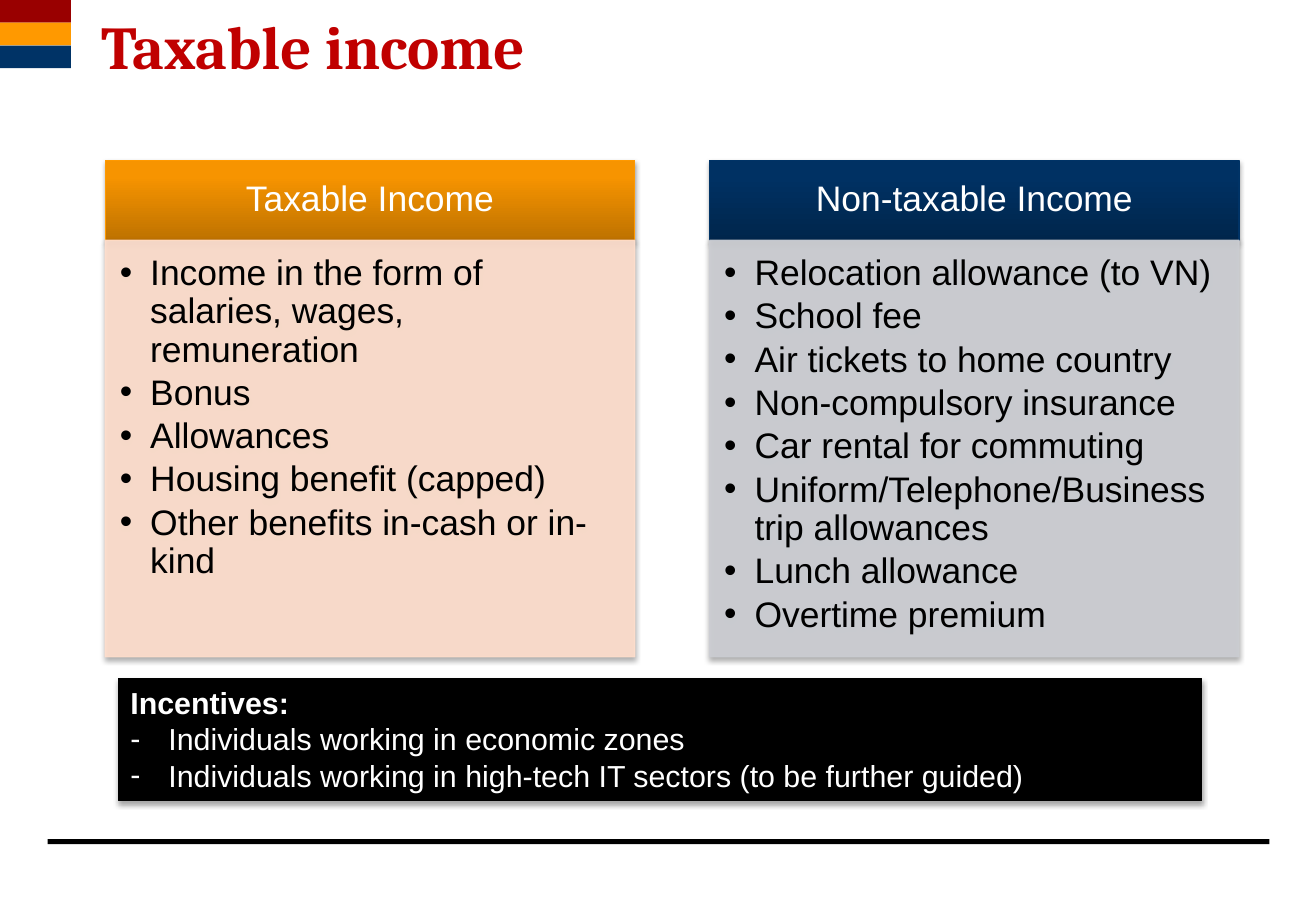
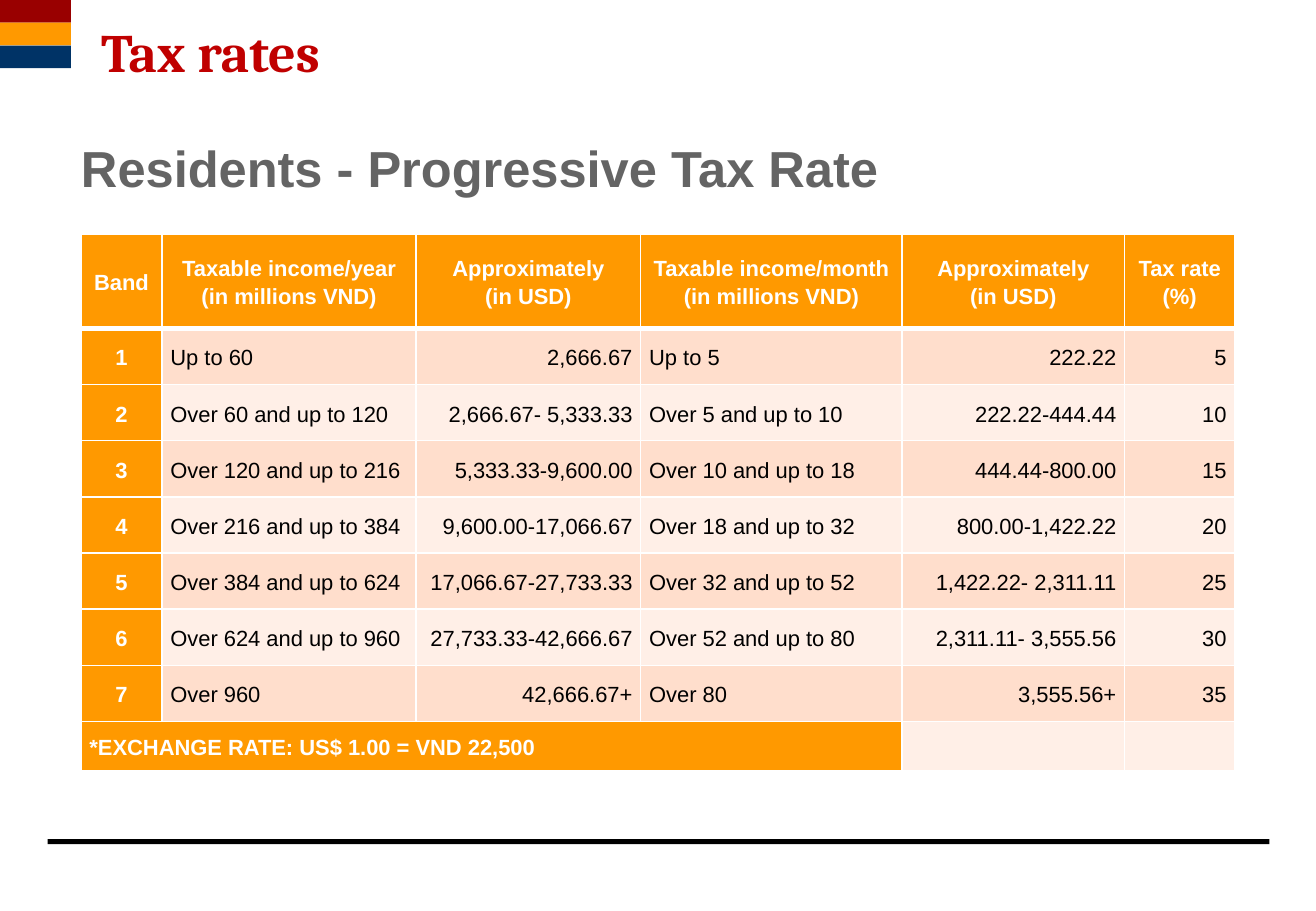
from lxml import etree
from pptx import Presentation
from pptx.dml.color import RGBColor
from pptx.enum.shapes import MSO_SHAPE
from pptx.enum.text import MSO_ANCHOR, MSO_AUTO_SIZE, PP_ALIGN
from pptx.oxml.ns import qn
from pptx.util import Inches, Pt

RECTANGLE = MSO_SHAPE.RECTANGLE
TOP, MIDDLE = MSO_ANCHOR.TOP, MSO_ANCHOR.MIDDLE
LEFT, CENTER, RIGHT = PP_ALIGN.LEFT, PP_ALIGN.CENTER, PP_ALIGN.RIGHT
NO_FIT = MSO_AUTO_SIZE.NONE

COLUMNS, ROWS = 130, 90
CELL = Inches(1 / 12)
COMPARISON, TITLE_AND_CONTENT = 4, 1

BLACK, WHITE, GREY = "000000", "FFFFFF", "646464"
RED, MAROON, ORANGE, NAVY = "C00000", "990000", "FF9900", "003366"
PEACH, PALE_PEACH, SILVER = "FFDECC", "FFEFE7", "CCCED3"


def cells(count):
    """Convert grid cells to a length."""
    return round(count * CELL)


def rgb(value):
    """Turn a hex string into a colour."""
    return RGBColor.from_string(value)


def paint(fill, color, alpha=100):
    """Give a fill one colour and an opacity in percent."""
    fill.solid()
    fill.fore_color.rgb = rgb(color)
    if alpha < 100:
        clr = fill._xPr.find(qn("a:solidFill"))[0]
        etree.SubElement(clr, qn("a:alpha"), val=str(alpha * 1000))


def write(frame, lines, size=21, color=BLACK, font="Arial", bold=False, align=LEFT,
          spacing=1.0, after=0, bullet=None, indent=0, hanging=0):
    """Add one formatted paragraph for each line of text."""
    for line in [lines] if isinstance(lines, str) else lines:
        paragraph = frame.add_paragraph() if frame.text else frame.paragraphs[0]
        properties = paragraph._p.get_or_add_pPr()
        properties.set("marL", str(cells(indent)))
        properties.set("indent", str(-cells(hanging)))
        if bullet:
            etree.SubElement(properties, qn("a:buFont"), typeface="Arial")
            etree.SubElement(properties, qn("a:buChar"), char=bullet)
        else:
            etree.SubElement(properties, qn("a:buNone"))
        paragraph.alignment = align
        paragraph.line_spacing = spacing
        paragraph.space_before = Pt(0)
        paragraph.space_after = Pt(after)
        run = paragraph.add_run()
        run.text = line
        run.font.name, run.font.size, run.font.bold = font, Pt(size), bold
        run.font.color.rgb = rgb(color)


class Deck:
    """Hold the shared style and the current slide."""

    def __init__(self):
        """Set the slide size."""
        self.show = Presentation()
        self.show.slide_width = cells(COLUMNS)
        self.show.slide_height = cells(ROWS)
        self.slide = None

    def start(self, layout):
        """Add a slide and make it current."""
        self.slide = self.show.slides.add_slide(self.show.slide_layouts[layout])

    def place(self, shape, area):
        """Put a shape at left, top, width and height in cells."""
        shape.left, shape.top, shape.width, shape.height = map(cells, area)

    def frame(self, shape, anchor, insets):
        """Prepare the text frame of a shape."""
        frame = shape.text_frame
        frame.word_wrap, frame.auto_size = True, NO_FIT
        frame.vertical_anchor = anchor
        (frame.margin_left, frame.margin_top,
         frame.margin_right, frame.margin_bottom) = map(cells, insets)
        return frame

    def block(self, area, color):
        """Draw a plain rectangle."""
        shape = self.slide.shapes.add_shape(RECTANGLE, *map(cells, area))
        paint(shape.fill, color)
        shape.line.fill.background()
        shape.shadow.inherit = False
        return shape

    def brand_master(self):
        """Put the colour bands and the bottom rule on the master."""
        parts = [self.block((4.7, 82.9, 120.7, 0.5), BLACK)]
        for row, color in enumerate((MAROON, ORANGE, NAVY)):
            parts.append(self.block((0, row * 2.25, 7, 2.25), color))
        for part in parts:
            self.show.slide_master.shapes.element.append(part.element)

    def outline(self, shape, color, alpha=100):
        """Give a shape a thin line and a soft shadow."""
        shape.line.width = Pt(0.75)
        paint(shape.line.fill, color, alpha)
        shape.shadow.inherit = False
        effects = shape.element.spPr.find(qn("a:effectLst"))
        shadow = etree.SubElement(effects, qn("a:outerShdw"), blurRad=str(Pt(3.1)),
                                  dist=str(Pt(1.8)), dir="5400000", rotWithShape="0")
        black = etree.SubElement(shadow, qn("a:srgbClr"), val=BLACK)
        etree.SubElement(black, qn("a:alpha"), val="35000")

    def title(self, text, size, area):
        """Fill the title placeholder."""
        title = self.slide.shapes.title
        self.place(title, area)
        write(self.frame(title, MIDDLE, (0, 0.48, 0, 0)), text, size=size,
              color=RED, font="Cambria", bold=True, spacing=0.85)

    def subtitle(self, text, area):
        """Fill the body placeholder with a subtitle."""
        subtitle = self.slide.placeholders[1]
        self.place(subtitle, area)
        write(self.frame(subtitle, MIDDLE, (0, 0.48, 0, 0)), text, size=30,
              color=GREY, bold=True, spacing=0.85, indent=6)

    def column(self, number, heading, items, line, shades, tint):
        """Fill one heading and the list below it."""
        left, top, width, head, body = 10.4 + number * 59.7, 15.84, 52.3, 7.9, 41.16
        header = self.slide.placeholders[1 + 2 * number]
        self.place(header, (left, top, width, head))
        header.fill.gradient()
        header.fill.gradient_angle = 90
        for stop, position, shade in zip(header.fill.gradient_stops, (0, 0.8), shades):
            stop.position, stop.color.rgb = position, rgb(shade)
        self.outline(header, line)
        write(self.frame(header, MIDDLE, (1.92, 1.08, 1.92, 1.08)), heading,
              color=WHITE, align=CENTER, spacing=0.9)

        panel = self.slide.placeholders[2 + 2 * number]
        self.place(panel, (left, top + head, width, body))
        paint(panel.fill, tint, 90)
        self.outline(panel, tint, 90)
        write(self.frame(panel, TOP, (1.44, 1.44, 1.92, 2.16)), items,
              spacing=0.9, after=3, bullet="•", indent=3, hanging=3)

    def callout(self, heading, items, area):
        """Draw a dark box with a heading and dashed items."""
        box = self.block(area, BLACK)
        self.outline(box, BLACK)
        frame = self.frame(box, TOP, (1.2, 0.6, 1.2, 0.6))
        write(frame, heading, size=18, color=WHITE, bold=True)
        write(frame, items, size=18, color=WHITE, bullet="-", indent=3.75, hanging=3.75)

    def cell(self, cell, lines, fill, top=1, bottom=1, **style):
        """Border, fill and write one table cell."""
        properties = cell._tc.get_or_add_tcPr()
        for side, width in (("L", 1), ("R", 1), ("T", top), ("B", bottom)):
            border = etree.SubElement(properties, qn("a:ln" + side), w=str(Pt(width)))
            solid = etree.SubElement(border, qn("a:solidFill"))
            etree.SubElement(solid, qn("a:srgbClr"), val=WHITE)
        paint(cell.fill, fill)
        cell.vertical_anchor = MIDDLE
        cell.margin_left = cell.margin_right = cells(0.84)
        cell.margin_top = cell.margin_bottom = 0
        if lines:
            write(cell.text_frame, lines, size=13, spacing=1.15, **style)

    def rate_table(self, headings, bands, note, area, widths, heights):
        """Draw the tax bands with a heading row and a note row."""
        last = len(bands) + 1
        table = self.slide.shapes.add_table(
            last + 1, len(headings), *map(cells, area)).table
        for column, width in zip(table.columns, widths):
            column.width = cells(width)
        for row, height in zip(table.rows, heights):
            row.height = cells(height)
        strong = {"color": WHITE, "bold": True}
        aligns = (CENTER, LEFT, RIGHT, LEFT, RIGHT, RIGHT)
        for column, heading in enumerate(headings):
            self.cell(table.cell(0, column), heading, ORANGE, bottom=3,
                      align=CENTER, **strong)
        for row, band in enumerate(bands, 1):
            tint = PEACH if row % 2 else PALE_PEACH
            for column, value in enumerate((str(row), *band)):
                self.cell(table.cell(row, column), value, tint if column else ORANGE,
                          top=3 if row == 1 else 1, align=aligns[column],
                          **({} if column else strong))
        table.cell(last, 0).merge(table.cell(last, 3))
        self.cell(table.cell(last, 0), note, ORANGE, **strong)
        for column in (4, 5):
            self.cell(table.cell(last, column), None, PALE_PEACH)


def main():
    """Build both slides and save them."""
    deck = Deck()

    deck.start(COMPARISON)
    deck.brand_master()
    deck.title("Taxable income", 36, (10, 0, 120, 9.5))
    deck.column(0, "Taxable Income", [
        "Income in the form of salaries, wages, remuneration",
        "Bonus",
        "Allowances",
        "Housing benefit (capped)",
        "Other benefits in-cash or in-kind",
    ], ORANGE, ("BE7200", "F79400"), PEACH)
    deck.column(1, "Non-taxable Income", [
        "Relocation allowance (to VN)",
        "School fee",
        "Air tickets to home country",
        "Non-compulsory insurance",
        "Car rental for commuting",
        "Uniform/Telephone/Business trip allowances",
        "Lunch allowance",
        "Overtime premium",
    ], NAVY, ("00264C", "003163"), SILVER)
    deck.callout("Incentives:", [
        "Individuals working in economic zones",
        "Individuals working in high-tech IT sectors (to be further guided)",
    ], (11.7, 67, 107, 12.1))

    deck.start(TITLE_AND_CONTENT)
    deck.title("Tax rates", 32, (10, 0.1, 79, 10.4))
    deck.subtitle("Residents - Progressive Tax Rate", (2, 14.2, 90, 5.2))
    dollars = ("Approximately", "(in USD)")
    deck.rate_table(
        ["Band", ("Taxable income/year", "(in millions VND)"), dollars,
         ("Taxable income/month", "(in millions VND)"), dollars, ("Tax rate", "(%)")],
        [("Up to 60", "2,666.67", "Up to 5", "222.22", "5"),
         ("Over 60 and up to 120", "2,666.67- 5,333.33",
          "Over 5 and up to 10", "222.22-444.44", "10"),
         ("Over 120 and up to 216", "5,333.33-9,600.00",
          "Over 10 and up to 18", "444.44-800.00", "15"),
         ("Over 216 and up to 384", "9,600.00-17,066.67",
          "Over 18 and up to 32", "800.00-1,422.22", "20"),
         ("Over 384 and up to 624", "17,066.67-27,733.33",
          "Over 32 and up to 52", "1,422.22- 2,311.11", "25"),
         ("Over 624 and up to 960", "27,733.33-42,666.67",
          "Over 52 and up to 80", "2,311.11- 3,555.56", "30"),
         ("Over 960", "42,666.67+", "Over 80", "3,555.56+", "35")],
        "*EXCHANGE RATE: US$ 1.00 = VND 22,500",
        (8, 23.1, 114, 53.1),
        (8, 25.1, 22.2, 25.8, 22, 10.9),
        (9.35, *[5.55] * 7, 4.9))

    deck.show.save("out.pptx")


if __name__ == "__main__":
    main()
